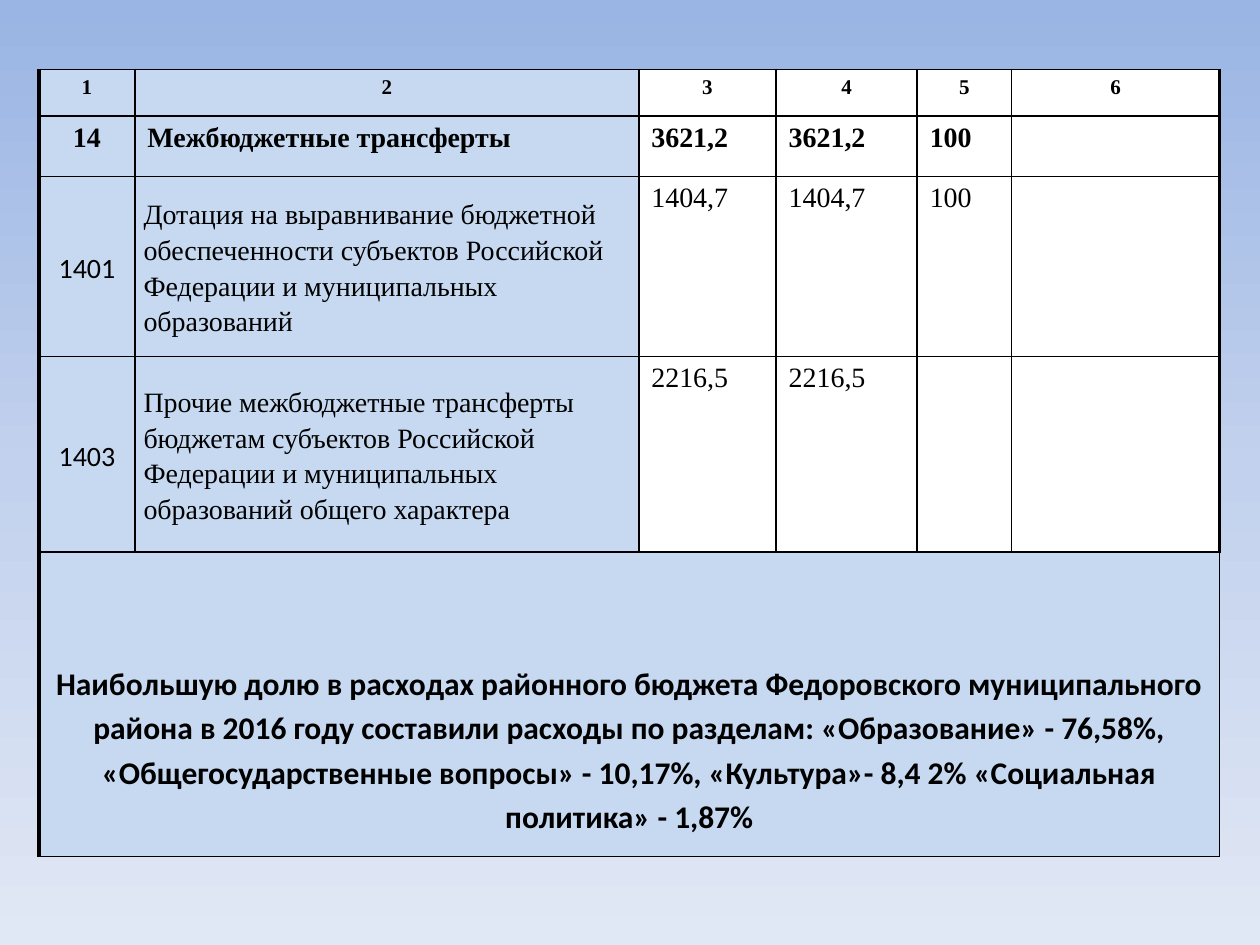
from copy import deepcopy
from lxml import etree
from pptx import Presentation
from pptx.dml.color import RGBColor
from pptx.enum.text import MSO_ANCHOR, PP_ALIGN
from pptx.oxml.ns import qn
from pptx.util import Inches, Pt

CENTER, LEFT = PP_ALIGN.CENTER, PP_ALIGN.LEFT
TOP, MIDDLE = MSO_ANCHOR.TOP, MSO_ANCHOR.MIDDLE
SERIF, SANS = "Times New Roman", "Calibri"
COLORS = {"sky": "9AB5E4", "mid": "C2D1ED", "pale": "E1E8F5",
          "label": "C6D9F1", "value": "FFFFFF", "ink": "000000"}
COLS = [0.76, 4, 1.09, 1.12, 0.75, 1.65]
ROWS = [0.37, 0.48, 1.43, 1.55, 2.42]
LAST = len(COLS) - 1
SUMMARY = ("Наибольшую долю в расходах районного бюджета Федоровского муниципального района "
           "в 2016 году составили расходы по разделам: «Образование» - 76,58%, "
           "«Общегосударственные вопросы» - 10,17%, «Культура»- 8,4 2% "
           "«Социальная политика» - 1,87%")
DATA = [
    ["1", "2", "3", "4", "5", "6"],
    ["14", "Межбюджетные трансферты", "3621,2", "3621,2", "100", ""],
    ["1401", "Дотация на выравнивание бюджетной обеспеченности субъектов Российской "
     "Федерации и муниципальных образований", "1404,7", "1404,7", "100", ""],
    ["1403", "Прочие межбюджетные трансферты бюджетам субъектов Российской Федерации "
     "и муниципальных образований общего характера", "2216,5", "2216,5", "", ""],
    [SUMMARY, "", "", "", "", ""],
]
HEADER, SECTION, SUMMARY_ROW = 0, 1, len(ROWS) - 1
SIZES = {HEADER: 12, SUMMARY_ROW: 18}
BOLD_ROWS = (HEADER, SECTION, SUMMARY_ROW)


def rgb(name):
    return RGBColor.from_string(COLORS[name])


def add_border(cell, side, width):
    ln = etree.SubElement(cell._tc.get_or_add_tcPr(), qn(f"a:ln{side}"), w=str(Pt(width)))
    fill = etree.SubElement(ln, qn("a:solidFill"))
    etree.SubElement(fill, qn("a:srgbClr"), val=COLORS["ink"])


prs = Presentation()
prs.slide_width, prs.slide_height = Inches(10), Inches(7.5)
s = prs.slides.add_slide(prs.slide_layouts[6])

bg = s.background.fill
bg.gradient()
bg.gradient_angle = 270
stops = s.element.find(".//" + qn("a:gsLst"))
stops.append(deepcopy(stops[0]))
for stop, name, position in zip(bg.gradient_stops, ("sky", "mid", "pale"), (0, 0.5, 1)):
    stop.color.rgb = rgb(name)
    stop.position = position

table = s.shapes.add_table(len(ROWS), len(COLS), Inches(0.31), Inches(0.55),
                           Inches(sum(COLS)), Inches(sum(ROWS))).table
table.first_row = table.horz_banding = False
for column, width in zip(table.columns, COLS):
    column.width = Inches(width)
for row, height in zip(table.rows, ROWS):
    row.height = Inches(height)
table.cell(SUMMARY_ROW, 0).merge(table.cell(SUMMARY_ROW, LAST))

for i, texts in enumerate(DATA):
    for j, text in enumerate(texts):
        cell = table.cell(i, j)
        for side in "LRTB":
            outer = (side, j) in (("L", 0), ("R", LAST))
            add_border(cell, side, 2.25 if outer else 1)
        is_label = j < 2 or i == SUMMARY_ROW
        cell.fill.solid()
        cell.fill.fore_color.rgb = rgb("label" if is_label else "value")
        if not text:
            continue

        is_body_label = is_label and i > SECTION
        p = cell.text_frame.paragraphs[0]
        p.alignment = CENTER if i == HEADER or j == 0 else LEFT
        cell.vertical_anchor = MIDDLE if is_body_label else TOP
        if is_body_label:
            p.line_spacing = 1.15
            margins = {"margin_left": 0.07, "margin_right": 0.07, "margin_bottom": 0,
                       "margin_top": 0.7 if i == SUMMARY_ROW else 0}
            for attr, value in margins.items():
                setattr(cell, attr, Inches(value))

        r = p.add_run()
        r.text = text
        font = {"name": SANS if is_body_label and j == 0 else SERIF,
                "size": Pt(SIZES.get(i, 16)), "bold": i in BOLD_ROWS}
        for attr, value in font.items():
            setattr(r.font, attr, value)
        r.font.color.rgb = rgb("ink")

prs.save("out.pptx")
